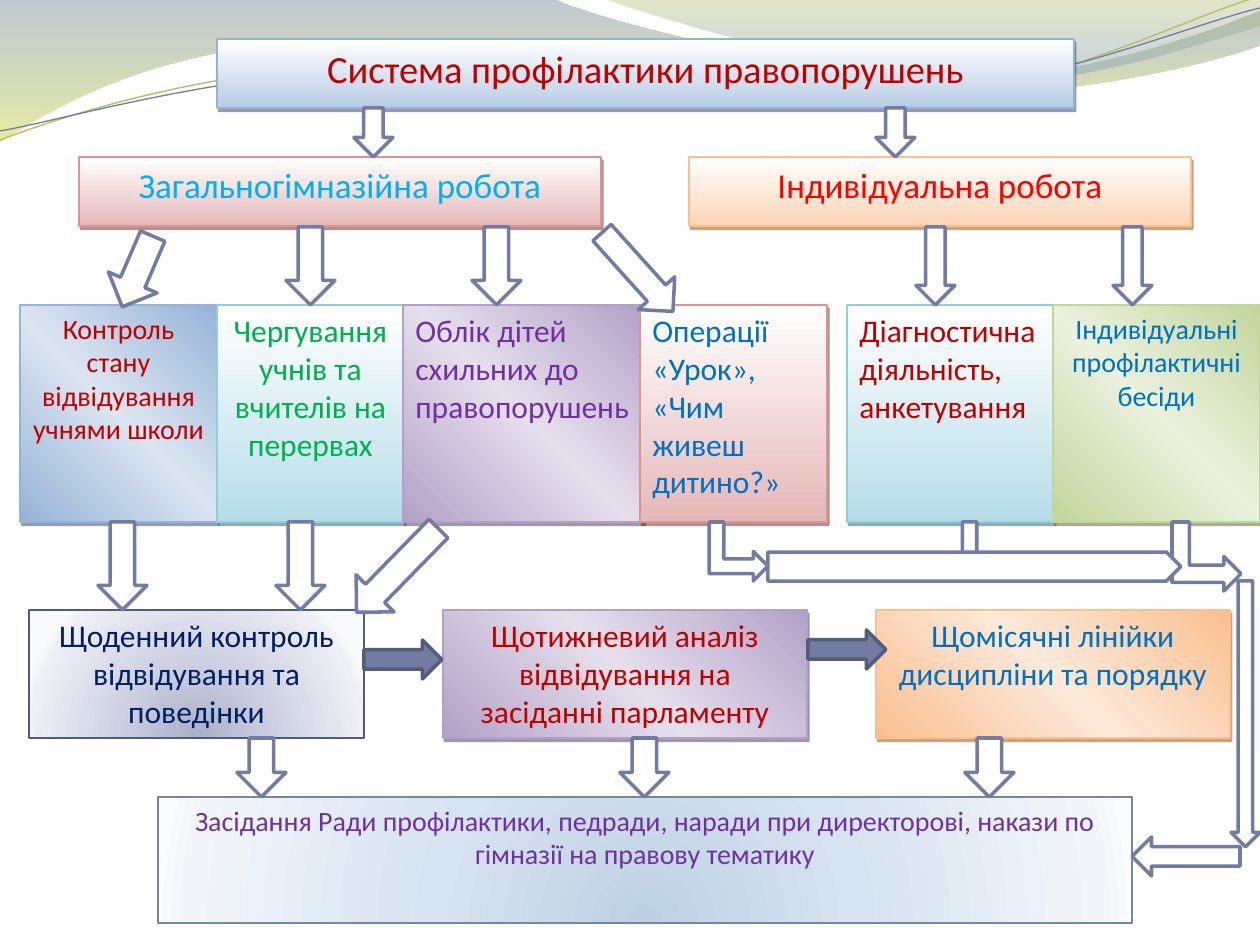
from pptx import Presentation
from pptx import util as u
from pptx.dml.color import RGBColor
from pptx.enum import shapes, text
from pptx.oxml import parse_xml
from pptx.oxml.ns import nsdecls, qn

PX = 914400 / 126
rgb = RGBColor.from_string
WHITE, SLATE, SLATE_DARK = rgb("FFFFFF"), rgb("727CA3"), rgb("545C79")
INK, OLIVE = rgb("545B79"), rgb("B9C06C")
RED, BRIGHT_RED, SKY = rgb("C00000"), rgb("FF0000"), rgb("00B0F0")
GREEN, PURPLE, BLUE, NAVY = rgb("00B050"), rgb("7030A0"), rgb("0070C0"), rgb("002060")


def set_gradient(shape, stops, direction):
    """Stops are (percent, colour, opacity); direction is XML for a:lin or a:path."""
    items = "".join(
        f'<a:gs pos="{position * 1000}"><a:srgbClr val="{color}">'
        + (f'<a:alpha val="{opacity * 1000}"/>' if opacity < 100 else "")
        + "</a:srgbClr></a:gs>"
        for position, color, opacity in stops)
    shape.fill.gradient()
    properties = shape._element.spPr
    properties.replace(properties.find(qn("a:gradFill")), parse_xml(
        f'<a:gradFill {nsdecls("a")} rotWithShape="1">'
        f"<a:gsLst>{items}</a:gsLst>{direction}</a:gradFill>"))


def add_outline(start, segments, closed):
    """Draw one-point segments as lines and three-point segments as Bezier curves."""
    builder = slide.shapes.build_freeform(*start, scale=PX)
    builder.add_line_segments([point for segment in segments for point in segment],
                              close=closed)
    shape = builder.convert_to_shape()
    lines = iter(list(shape._element.iter(qn("a:lnTo"))))
    for segment in segments:
        pieces = [next(lines) for _ in segment]
        if len(pieces) == 3:
            curve = parse_xml(f'<a:cubicBezTo {nsdecls("a")}/>')
            pieces[0].addprevious(curve)
            for piece in pieces:
                curve.append(piece[0])
                piece.getparent().remove(piece)
    return shape


DOWNWARD = '<a:lin ang="5400000" scaled="1"/>'
DIAGONAL = '<a:lin ang="18900000" scaled="1"/>'
RADIAL = ('<a:path path="circle"><a:fillToRect l="50000" t="130000" '
          'r="50000" b="-30000"/></a:path>')

presentation = Presentation()
presentation.slide_width = u.Emu(round(1260 * PX))
presentation.slide_height = u.Emu(round(945 * PX))
slide = presentation.slides.add_slide(presentation.slide_layouts[6])

# Waves along the top: start, segments, gradient stops or None, line colour, line width
WAVES = [
    ((0, 0), [[(554, -1)],
              [(600, 21), (837, 79), (955, 79)], [(1075, 79), (1207, 33), (1260, 11)],
              [(1261, 45)],
              [(1239, 55), (1096, 96), (940, 95)], [(784, 95), (481, 35), (324, 43)],
              [(161, 45), (58, 105), (-1, 142)]],
     [(0, rgb("72889B"), 45), (100, rgb("D3DE57"), 55)], None, 0),
    ((604, -1), [[(641, 14), (859, 78), (969, 82)], [(1079, 87), (1211, 40), (1260, 26)],
                 [(1260, 0)]],
     [(0, rgb("A4AC50"), 30), (80, rgb("84A3BD"), 45)], None, 0),
    ((0, 140), [[(60, 117), (199, 72), (349, 66)], [(498, 59), (747, 112), (898, 101)],
                [(1050, 90), (1182, 19), (1257, -3)]], None, OLIVE, 0.85),
    ((0, 131), [[(59, 121), (207, 77), (357, 71)], [(508, 64), (753, 106), (903, 95)],
                [(1053, 84), (1186, 26), (1260, 8)]], None, SLATE, 0.75),
]
for start, segments, stops, line_color, line_width in WAVES:
    shape = add_outline(start, segments, closed=stops is not None)
    shape.shadow.inherit = False
    if stops:
        set_gradient(shape, stops, DOWNWARD)
        shape.line.fill.background()
    else:
        shape.fill.background()
        shape.line.color.rgb = line_color
        shape.line.width = u.Pt(line_width)

# Box styles: gradient colours, direction, line colour, shadow colour
TITLE = ((WHITE, rgb("B8CCE4")), DOWNWARD, rgb("95B3D7"), rgb("243F60"))
PINK = ((WHITE, rgb("E5B8B7")), DOWNWARD, rgb("D99594"), rgb("622423"))
PEACH = ((WHITE, rgb("FBD4B4")), DOWNWARD, rgb("FABF8F"), rgb("974706"))
AQUA = ((WHITE, rgb("B6DDE8")), DOWNWARD, rgb("92CDDC"), rgb("205867"))
STEEL = ((rgb("95B3D7"), rgb("DBE5F1"), rgb("95B3D7")), DIAGONAL, rgb("95B3D7"), rgb("243F60"))
LILAC = ((rgb("B2A1C7"), rgb("E5DFEC"), rgb("B2A1C7")), DIAGONAL, rgb("B2A1C7"), rgb("3F3151"))
LIME = ((rgb("C2D69B"), rgb("EAF1DD"), rgb("C2D69B")), DIAGONAL, rgb("C2D69B"), rgb("4E6128"))
ORANGE = ((rgb("FABF8F"), rgb("FDE9D9"), rgb("FABF8F")), DIAGONAL, rgb("FABF8F"), rgb("974706"))
INDIGO = ((rgb("A9AFC8"), rgb("CCD0E1"), rgb("EFF0F5"), rgb("F9FAFC")), RADIAL, INK, None)
MIST = ((rgb("BED1E2"), rgb("D7E3F0"), rgb("F2F6FA"), rgb("FAFCFE")), RADIAL,
        rgb("758898"), None)
POSITIONS = {2: (0, 100), 3: (0, 50, 100), 4: (0, 43, 93, 100)}

CENTER, LEFT = text.PP_ALIGN.CENTER, text.PP_ALIGN.LEFT
BOXES = [
    (217, 39, 857, 69, TITLE, "Система профілактики правопорушень", 22, RED, CENTER),
    (79, 157, 522, 69, PINK, "Загальногімназійна робота", 20, SKY, CENTER),
    (689, 157, 502, 69, PEACH, "Індивідуальна робота", 20, BRIGHT_RED, CENTER),
    (20, 305, 197, 217, STEEL, "Контроль стану відвідування учнями школи", 16, RED, CENTER),
    (217, 305, 187, 217, AQUA, "Чергування учнів та вчителів на перервах", 18, GREEN, CENTER),
    (403, 305, 241, 217, LILAC, "Облік дітей схильних до правопорушень", 18, PURPLE, LEFT),
    (640, 305, 187, 217, PINK, "Операції «Урок», «Чим живеш дитино?»", 18, BLUE, LEFT),
    (847, 305, 207, 217, AQUA, "Діагностична діяльність, анкетування", 18, RED, LEFT),
    (1053, 305, 207, 217, LIME, "Індивідуальні профілактичні бесіди", 16, BLUE, CENTER),
    (29, 610, 335, 128, INDIGO, "Щоденний контроль відвідування та поведінки",
     18, NAVY, CENTER),
    (443, 610, 364, 128, LILAC, "Щотижневий аналіз відвідування на засіданні парламенту",
     18, RED, CENTER),
    (876, 610, 354, 128, ORANGE, "Щомісячні лінійки дисципліни та порядку",
     18, BLUE, CENTER),
    (158, 797, 974, 126, MIST, "Засідання Ради профілактики, педради, наради при "
     "директорові, накази по гімназії на правову тематику", 16, PURPLE, CENTER),
]
KIND = shapes.MSO_SHAPE
for *frame, style, wording, size, color, alignment in BOXES:
    colors, direction, line_color, shadow_color = style
    shape = slide.shapes.add_shape(KIND.RECTANGLE, *(round(value * PX) for value in frame))
    set_gradient(shape, [(position, stop, 100) for position, stop
                         in zip(POSITIONS[len(colors)], colors)], direction)
    shape.line.color.rgb = line_color
    shape.line.width = u.Pt(1 if shadow_color else 0.75)
    shape.shadow.inherit = False
    if shadow_color:
        shape._element.spPr.effectLst.append(parse_xml(
            f'<a:outerShdw {nsdecls("a")} dist="{u.Pt(2.2)}" dir="{63 * 60000}" '
            f'algn="ctr" rotWithShape="0"><a:srgbClr val="{shadow_color}">'
            '<a:alpha val="50000"/></a:srgbClr></a:outerShdw>'))
    text_frame = shape.text_frame
    text_frame.word_wrap = True
    text_frame.vertical_anchor = text.MSO_ANCHOR.TOP
    paragraph = text_frame.paragraphs[0]
    paragraph.alignment = alignment
    paragraph.space_after = u.Pt(10)
    run = paragraph.add_run()
    run.text = wording
    run.font.name = "Calibri"
    run.font.size = u.Pt(size)
    run.font.color.rgb = color

# Arrows: kind, left, top, width, height, rotation
DOWN, RIGHT, BENT = KIND.DOWN_ARROW, KIND.RIGHT_ARROW, KIND.BENT_UP_ARROW
ARROWS = [
    *((DOWN, x, 108, 39, 49, 0) for x in (354, 876)),
    (DOWN, 111, 233, 53, 77, 23.3),
    (DOWN, 98, 522, 49, 88, 0),
    (DOWN, 613, 219, 49, 106, 318),
    *((DOWN, x, 227, 39, 78, 0) for x in (916, 1113)),
    *((DOWN, x, 227, 49, 78, 0) for x in (472, 286)),
    (DOWN, 276, 522, 49, 88, 0),
    (DOWN, 371, 512, 53, 117, 44.4),
    (RIGHT, 364, 640, 78, 39, 0),
    (RIGHT, 808, 630, 78, 39, 0),
    *((DOWN, x, 738, 49, 59, 0) for x in (237, 620, 965)),
    (BENT, 709, 522, 59, 59, 90),
    (BENT, 1172, 522, 69, 69, 90),
    (DOWN, 955, 522, 29, 49, 0),
    (KIND.PENTAGON, 768, 552, 413, 29, 0),
    (DOWN, 1231, 581, 29, 266, 0),
    (KIND.LEFT_ARROW, 1132, 837, 108, 39, 0),
]
for kind, *frame, rotation in ARROWS:
    shape = slide.shapes.add_shape(kind, *(round(value * PX) for value in frame))
    shape.rotation = rotation
    shape.shadow.inherit = False
    shape.fill.solid()
    shape.fill.fore_color.rgb = SLATE if kind == RIGHT else WHITE
    shape.line.color.rgb = SLATE_DARK if kind == RIGHT else SLATE
    shape.line.width = u.Pt(2)

presentation.save("out.pptx")
